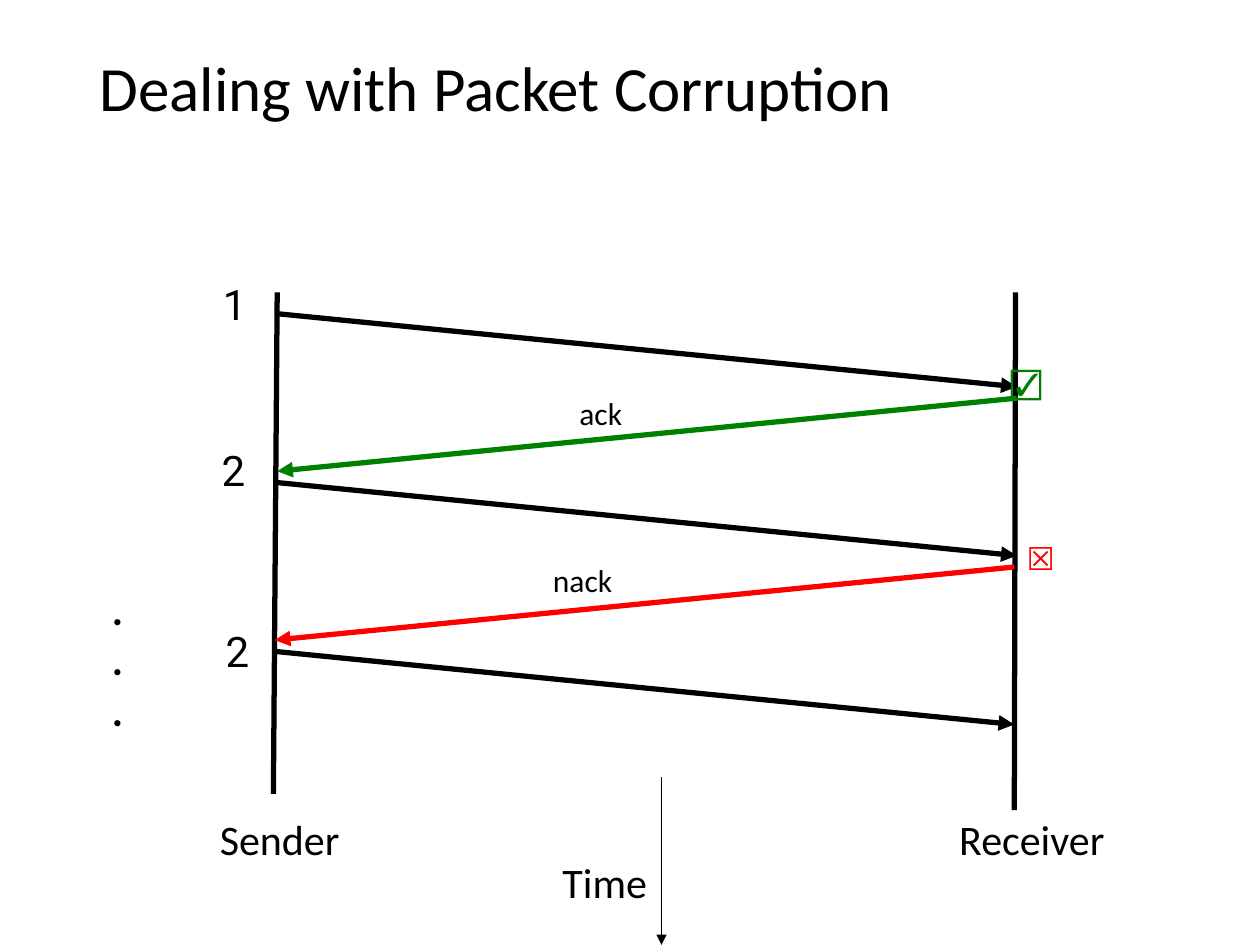
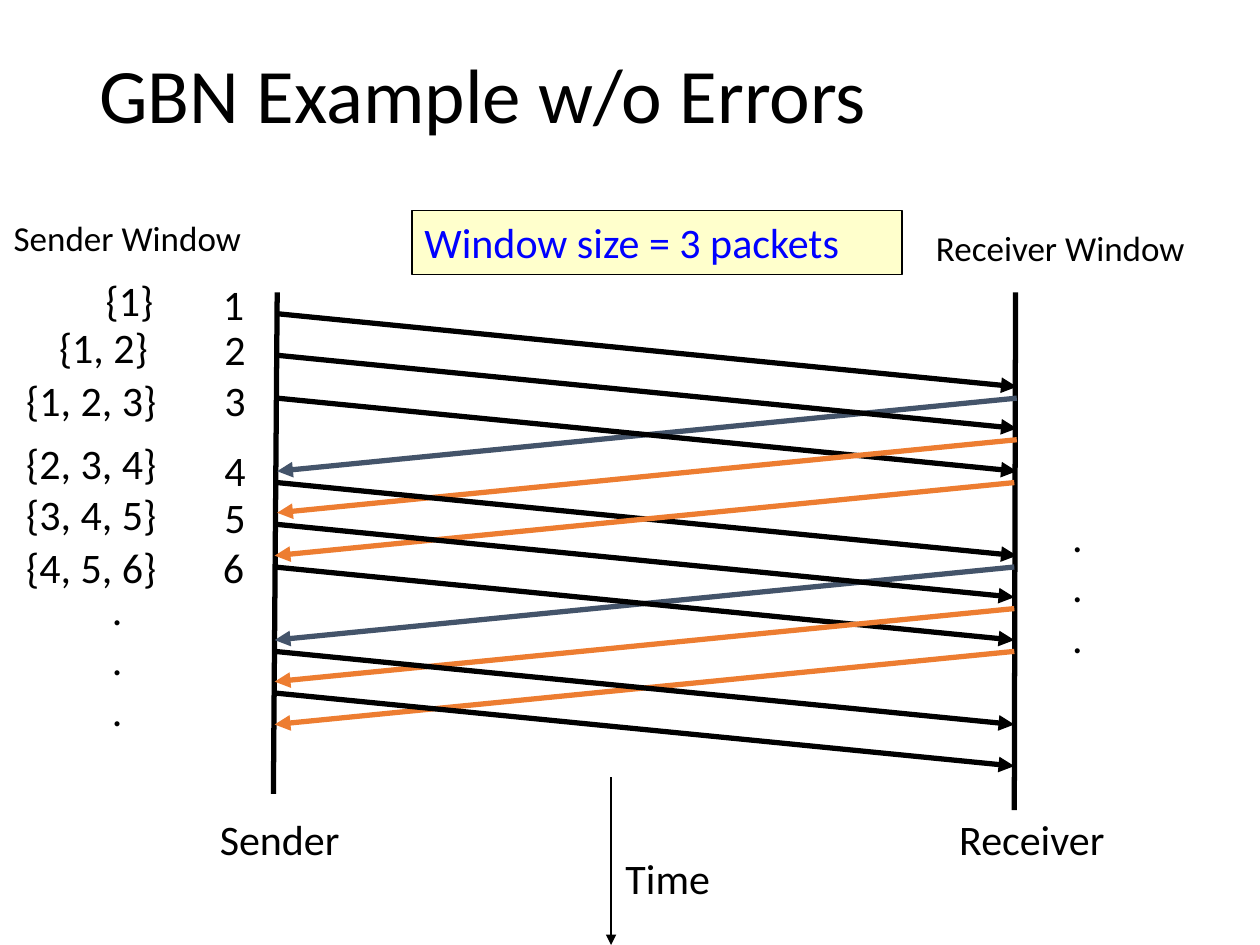
from dataclasses import dataclass

from lxml import etree
from pptx import Presentation
from pptx.dml.color import RGBColor
from pptx.enum.shapes import MSO_CONNECTOR, MSO_SHAPE
from pptx.enum.text import MSO_ANCHOR, MSO_AUTO_SIZE, PP_ALIGN
from pptx.oxml.ns import qn
from pptx.slide import Slide
from pptx.text.text import TextFrame
from pptx.util import Emu, Pt

STRAIGHT = MSO_CONNECTOR.STRAIGHT
RECTANGLE = MSO_SHAPE.RECTANGLE
TOP, MIDDLE = MSO_ANCHOR.TOP, MSO_ANCHOR.MIDDLE
LEFT, CENTER = PP_ALIGN.LEFT, PP_ALIGN.CENTER
FIT_SHAPE = MSO_AUTO_SIZE.SHAPE_TO_FIT_TEXT

EMU_PER_PX = 9144  # 100 px to the inch
BLANK_LAYOUT = 6

BLACK = "000000"
GREEN = "008000"
RED = "FF0000"
BLUE = "0000FF"
CREAM = "FFFFCC"
SLATE = "44546A"
ORANGE = "ED7D31"

SENDER_X, RECEIVER_X = 220, 807
FIRST_SEND_Y = 249
TRAVEL_DROP = 58
DOTS = ".\n.\n."


@dataclass(frozen=True)
class Label:
    text: str
    left: int
    top: int
    width: int
    height: int
    size: int = 24
    color: str = BLACK
    font: str = "Calibri"
    bold: bool = False
    centered: bool = False
    wrap: bool = False
    inset_x: int = 10
    inset_y: int = 5


@dataclass(frozen=True)
class Line:
    x1: int
    y1: int
    x2: int
    y2: int
    color: str = BLACK
    width: int = 3
    arrow: bool = False


@dataclass(frozen=True)
class Message:
    """A packet, or a reply to one, sent at a numbered time slot."""
    slot: int
    color: str = BLACK
    reply: bool = False


@dataclass(frozen=True)
class WindowStep:
    """A packet number and the sender window after sending it."""
    number: str
    number_left: int
    number_top: int
    window: str
    window_left: int
    window_top: int
    window_width: int


TIMELINES = [Line(220, 232, 217, 630), Line(806, 232, 805, 643)]

CORRUPTION_MESSAGES = [
    Message(0),
    Message(2, GREEN, reply=True),
    Message(4),
    Message(6, RED, reply=True),
    Message(8),
]

GBN_MESSAGES = [
    Message(0),
    Message(2, SLATE, reply=True),
    Message(1),
    Message(2),
    Message(3, ORANGE, reply=True),
    Message(4),
    Message(4, ORANGE, reply=True),
    Message(6, SLATE, reply=True),
    Message(5),
    Message(6),
    Message(7, ORANGE, reply=True),
    Message(8, ORANGE, reply=True),
    Message(8),
    Message(9),
]

WINDOW_STEPS = [
    WindowStep("1", 168, 217, "{1}", 74, 213, 61),
    WindowStep("2", 169, 253, "{1, 2}", 37, 250, 102),
    WindowStep("3", 169, 293, "{1, 2, 3}", 11, 292, 140),
    WindowStep("4", 169, 349, "{2, 3, 4}", 11, 342, 140),
    WindowStep("5", 169, 386, "{3, 4, 5}", 11, 383, 140),
    WindowStep("6", 168, 426, "{4, 5, 6}", 11, 425, 140),
]

CORRUPTION_LABELS = [
    Label("ack", 450, 308, 71, 44, size=18),
    Label("nack", 429, 440, 88, 44, size=18),
    Label("☑", 792, 283, 66, 44, size=18, color=GREEN, font="Arial", wrap=True),
    Label("☒", 805, 423, 62, 44, size=18, color=RED, font="Arial", wrap=True),
    Label(DOTS, 79, 458, 29, 130, bold=True),
]

GBN_LABELS = [
    Label("Sender Window", 1, 167, 228, 43, size=20),
    Label("Receiver Window", 733, 175, 250, 43, size=20),
    Label(DOTS, 79, 458, 29, 131),
    Label(DOTS, 841, 400, 29, 131),
]

WINDOW_SIZE = Label("Window size = 3 packets", 327, 167, 389, 51,
                    color=BLUE, wrap=True)


def px(length: int) -> Emu:
    return Emu(length * EMU_PER_PX)


def rgb(color: str) -> RGBColor:
    return RGBColor.from_string(color)


def fill_text(text_frame: TextFrame, label: Label) -> None:
    text_frame.word_wrap = label.wrap
    text_frame.margin_left = text_frame.margin_right = px(label.inset_x)
    text_frame.margin_top = text_frame.margin_bottom = px(label.inset_y)
    text_frame.vertical_anchor = MIDDLE if label.centered else TOP
    text_frame.text = label.text
    for paragraph in text_frame.paragraphs:
        paragraph.alignment = CENTER if label.centered else LEFT
        for run in paragraph.runs:
            run.font.name = label.font
            run.font.size = Pt(label.size)
            run.font.bold = label.bold
            run.font.color.rgb = rgb(label.color)


def add_label(slide: Slide, label: Label) -> TextFrame:
    shape = slide.shapes.add_textbox(px(label.left), px(label.top),
                                     px(label.width), px(label.height))
    fill_text(shape.text_frame, label)
    shape.text_frame.auto_size = FIT_SHAPE
    return shape.text_frame


def add_title(slide: Slide, text: str, size: int) -> None:
    text_frame = add_label(slide, Label(text, 69, 40, 862, 145, size, wrap=True))
    text_frame.auto_size = MSO_AUTO_SIZE.NONE
    text_frame.paragraphs[0].line_spacing = 0.9


def add_line(slide: Slide, line: Line) -> None:
    connector = slide.shapes.add_connector(STRAIGHT, px(line.x1), px(line.y1),
                                           px(line.x2), px(line.y2))
    connector.line.color.rgb = rgb(line.color)
    connector.line.width = Pt(line.width)
    properties = connector.element.spPr
    if line.arrow:
        outline = properties.find(qn("a:ln"))
        etree.SubElement(outline, qn("a:tailEnd"), type="triangle")
    etree.SubElement(properties, qn("a:effectLst"))


def add_message(slide: Slide, message: Message) -> None:
    """Draw a slanted arrow; later ones follow the lean of the timelines."""
    lean = 2 if message.slot >= (4 if message.reply else 5) else 0
    start, end = SENDER_X - lean, RECEIVER_X - lean
    if message.reply:
        start, end = end, start
    y = FIRST_SEND_Y + message.slot * 67 // 2
    add_line(slide, Line(start, y, end, y + TRAVEL_DROP, message.color, arrow=True))


def add_number(slide: Slide, number: str, left: int, top: int,
               font: str = "Calibri") -> None:
    add_label(slide, Label(number, left, top, 37, 49, font=font,
                           inset_x=9, inset_y=4))


def add_window_size(slide: Slide) -> None:
    shape = slide.shapes.add_shape(RECTANGLE, px(WINDOW_SIZE.left), px(WINDOW_SIZE.top),
                                   px(WINDOW_SIZE.width), px(WINDOW_SIZE.height))
    shape.shadow.inherit = False
    shape.fill.solid()
    shape.fill.fore_color.rgb = rgb(CREAM)
    shape.line.color.rgb = rgb(BLACK)
    shape.line.width = Pt(0.75)
    fill_text(shape.text_frame, WINDOW_SIZE)


def add_sequence_slide(presentation: Presentation, title: str, title_size: int,
                       time_x: int, time_label: Label,
                       messages: list[Message], labels: list[Label]) -> Slide:
    """Add a slide with the title, both timelines, time axis and messages."""
    slide = presentation.slides.add_slide(presentation.slide_layouts[BLANK_LAYOUT])
    add_title(slide, title, title_size)
    add_line(slide, Line(time_x, 617, time_x, 750, width=1, arrow=True))
    for timeline in TIMELINES:
        add_line(slide, timeline)
    for message in messages:
        add_message(slide, message)
    ends = [Label("Sender", 155, 641, 134, 50, centered=True),
            Label("Receiver", 739, 641, 160, 50, centered=True)]
    for label in [time_label, *ends, *labels]:
        add_label(slide, label)
    return slide


def add_corruption_slide(presentation: Presentation) -> None:
    slide = add_sequence_slide(
        presentation, "Dealing with Packet Corruption", 36, 525,
        Label("Time", 433, 675, 94, 50, centered=True),
        CORRUPTION_MESSAGES, CORRUPTION_LABELS)
    for number, left, top in [("1", 168, 217), ("2", 167, 349), ("2", 170, 492)]:
        add_number(slide, number, left, top, "Roboto")


def add_gbn_slide(presentation: Presentation) -> None:
    slide = add_sequence_slide(
        presentation, "GBN Example w/o Errors", 44, 485,
        Label("Time", 483, 672, 94, 50, centered=True),
        GBN_MESSAGES, GBN_LABELS)
    add_window_size(slide)
    for step in WINDOW_STEPS:
        add_number(slide, step.number, step.number_left, step.number_top)
        add_label(slide, Label(step.window, step.window_left, step.window_top,
                               step.window_width, 50))


def main() -> None:
    presentation = Presentation()
    presentation.slide_width, presentation.slide_height = px(1000), px(750)
    add_corruption_slide(presentation)
    add_gbn_slide(presentation)
    presentation.save("out.pptx")


if __name__ == "__main__":
    main()
